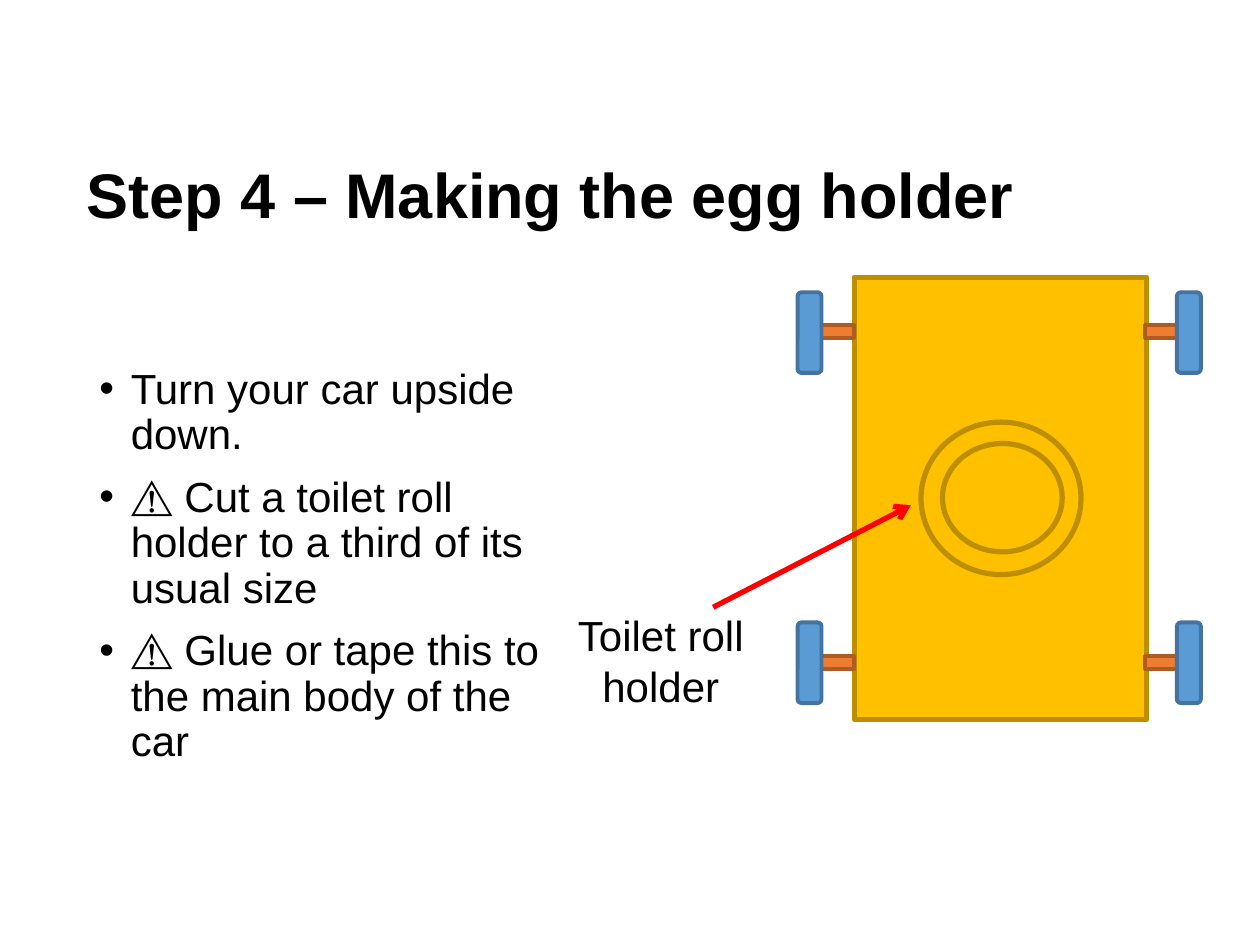
from dataclasses import dataclass
from itertools import product

from lxml import etree
from pptx import Presentation
from pptx.dml.color import RGBColor
from pptx.enum.shapes import MSO_CONNECTOR, MSO_SHAPE
from pptx.enum.text import MSO_ANCHOR, PP_ALIGN
from pptx.oxml.ns import qn
from pptx.slide import Slide
from pptx.text.text import TextFrame
from pptx.util import Inches, Pt

RECT = MSO_SHAPE.RECTANGLE
ROUND = MSO_SHAPE.ROUNDED_RECTANGLE
OVAL = MSO_SHAPE.OVAL
STRAIGHT = MSO_CONNECTOR.STRAIGHT
TOP, MIDDLE = MSO_ANCHOR.TOP, MSO_ANCHOR.MIDDLE
LEFT, CENTER = PP_ALIGN.LEFT, PP_ALIGN.CENTER


@dataclass(frozen=True)
class Theme:
    font: str = "Arial"
    title: int = 36
    body: int = 24
    ink: str = "000000"
    arrow: str = "FF0000"
    arrow_width: float = 3


@dataclass(frozen=True)
class Paint:
    fill: str
    line: str
    width: float


@dataclass(frozen=True)
class Box:
    left: float
    top: float
    width: float
    height: float

    def lengths(self) -> tuple:
        return tuple(map(Inches, (self.left, self.top, self.width, self.height)))


THEME = Theme()
CARD = Paint("FFC000", "BD8E00", 3)
AXLE = Paint("ED7D31", "AF5C24", 2.25)
WHEEL = Paint("5B9BD5", "43739E", 2.25)

STEPS = (
    "Turn your car upside down.",
    "⚠ Cut a toilet roll holder to a third of its usual size",
    "⚠ Glue or tape this to the main body of the car",
)
AXLE_LEFTS, AXLE_TOPS = (6.39, 9.09), (2.58, 5.21)
WHEEL_LEFTS, WHEEL_TOPS = (6.33, 9.34), (2.32, 4.94)


def add_part(slide: Slide, kind: MSO_SHAPE, box: Box, paint: Paint) -> None:
    part = slide.shapes.add_shape(kind, *box.lengths())
    part.shadow.inherit = False
    part.fill.solid()
    part.fill.fore_color.rgb = RGBColor.from_string(paint.fill)
    part.line.color.rgb = RGBColor.from_string(paint.line)
    part.line.width = Pt(paint.width)


def add_text(slide: Slide, box: Box, lines: tuple[str, ...], size: int,
             bold: bool = False, anchor: MSO_ANCHOR = TOP,
             align: PP_ALIGN = LEFT, pitch: float = 0.9,
             bullet: bool = False) -> TextFrame:
    frame = slide.shapes.add_textbox(*box.lengths()).text_frame
    frame.word_wrap = True
    frame.vertical_anchor = anchor
    frame.text = "\n".join(lines)
    for rank, para in enumerate(frame.paragraphs):
        para.alignment = align
        para.line_spacing = pitch
        para.space_before = Pt(10 if rank else 0)
        if bullet:
            props = para._p.get_or_add_pPr()
            props.set("marL", str(Inches(0.25)))
            props.set("indent", str(Inches(-0.25)))
            etree.SubElement(props, qn("a:buFont"), typeface=THEME.font)
            etree.SubElement(props, qn("a:buChar"), char="•")
        para.font.name = THEME.font
        para.font.size = Pt(size)
        para.font.bold = bold
        para.font.color.rgb = RGBColor.from_string(THEME.ink)
    return frame


def add_arrow(slide: Slide, start: tuple[float, float],
              end: tuple[float, float]) -> None:
    arrow = slide.shapes.add_connector(STRAIGHT, *map(Inches, start + end))
    arrow.line.color.rgb = RGBColor.from_string(THEME.arrow)
    arrow.line.width = Pt(THEME.arrow_width)
    etree.SubElement(arrow.line._get_or_add_ln(), qn("a:tailEnd"), type="arrow")
    etree.SubElement(arrow._element.spPr, qn("a:effectLst"))


def draw_car(slide: Slide) -> None:
    add_part(slide, RECT, Box(6.78, 2.2, 2.32, 3.51), CARD)
    for left, top in product(AXLE_LEFTS, AXLE_TOPS):
        add_part(slide, RECT, Box(left, top, 0.39, 0.1), AXLE)
    for left, top in product(WHEEL_LEFTS, WHEEL_TOPS):
        add_part(slide, ROUND, Box(left, top, 0.19, 0.64), WHEEL)
    for ring in (Box(7.31, 3.35, 1.27, 1.21), Box(7.48, 3.52, 0.95, 0.86)):
        add_part(slide, OVAL, ring, CARD)


def main() -> None:
    deck = Presentation()
    deck.slide_width, deck.slide_height = Inches(10), Inches(7.5)
    slide = deck.slides.add_slide(deck.slide_layouts[6])
    add_text(slide, Box(0.59, 1.13, 7.83, 0.89),
             ("Step 4 – Making the egg holder",), THEME.title,
             bold=True, anchor=MIDDLE)
    add_text(slide, Box(0.69, 2.87, 3.77, 3.51), STEPS, THEME.body, bullet=True)
    add_text(slide, Box(4.43, 4.79, 1.63, 0.91), ("Toilet roll holder",),
             THEME.body, align=CENTER, pitch=1.0)
    draw_car(slide)
    add_arrow(slide, (5.66, 4.82), (7.23, 4.01))
    deck.save("out.pptx")


if __name__ == "__main__":
    main()
